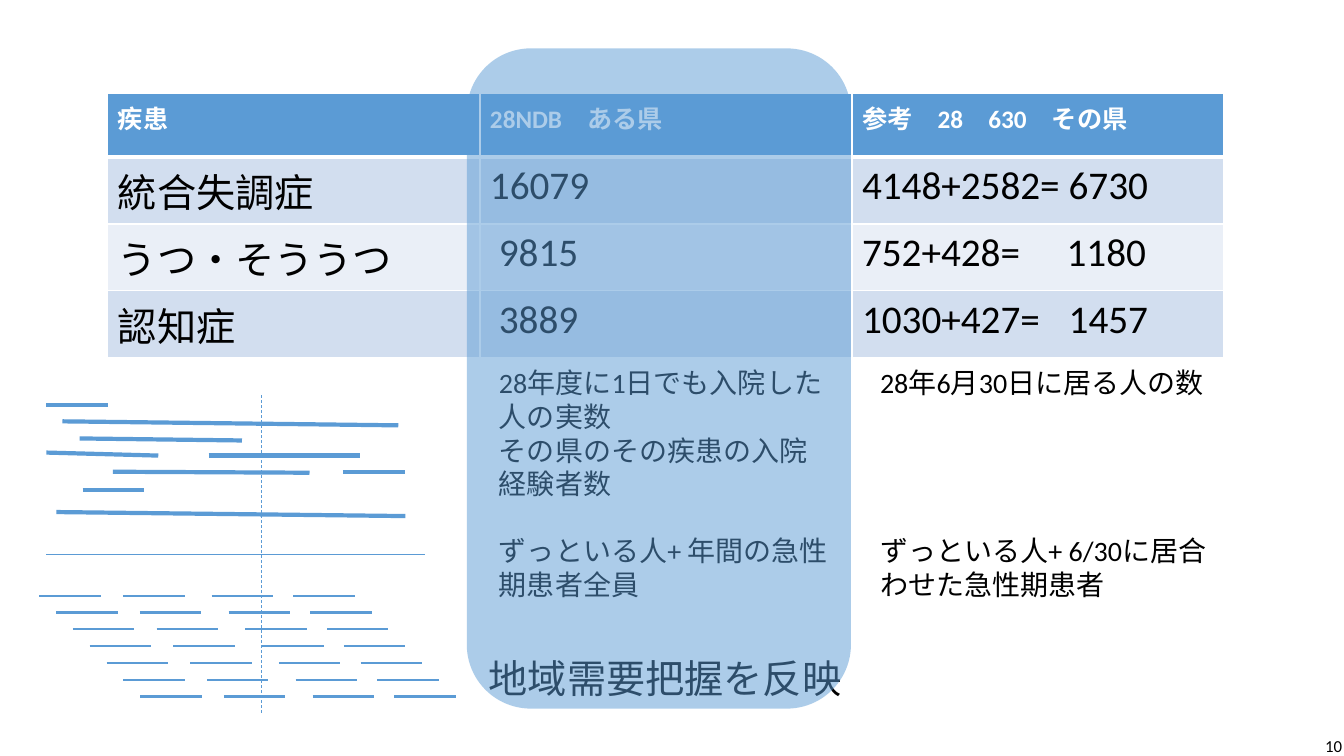
"""Build a slide comparing yearly inpatient counts with a one-day census."""
from dataclasses import dataclass

from lxml.etree import SubElement
from pptx import Presentation
from pptx.dml.color import RGBColor
from pptx.enum.dml import MSO_LINE
from pptx.enum.shapes import MSO_CONNECTOR, MSO_SHAPE
from pptx.enum.text import MSO_ANCHOR, MSO_AUTO_SIZE, PP_ALIGN
from pptx.oxml.ns import qn
from pptx.slide import Slide
from pptx.table import _Cell
from pptx.text.text import _Paragraph
from pptx.util import Inches, Pt

FONT = "Calibri"
BLUE, BLACK, WHITE = "5B9BD5", "000000", "FFFFFF"
BANDS = ("D2DEEF", "EAEFF7")
LINE_PITCH = 24


@dataclass(frozen=True)
class Stay:
    x1: float
    y1: float
    x2: float
    y2: float
    weight: float = 3
    dashed: bool = False


@dataclass(frozen=True)
class Paragraph:
    text: str
    lines_before: int = 0


@dataclass(frozen=True)
class Note:
    left: float
    top: float
    width: float
    height: float
    paragraphs: tuple[Paragraph, ...]
    size: float = 20


@dataclass(frozen=True)
class Row:
    height: float
    texts: tuple[str, str, str]
    tab: float = 0


ROWS = (
    Row(0.63, ("疾患", "28NDB　ある県", "参考　28　630　その県")),
    Row(0.6, ("統合失調症", "16079", "4148+2582= 6730")),
    Row(0.58, ("うつ・そううつ", " 9815", "752+428=\t1180"), 2.03),
    Row(0.63, ("認知症", " 3889", "1030+427=\t1457"), 2.05),
)

NOTES = (
    Note(4.85, 3.58, 3.51, 2.79, (
        Paragraph("28年度に1日でも入院した人の実数"),
        Paragraph("その県のその疾患の入院経験者数"),
        Paragraph("ずっといる人+ 年間の急性期患者全員", 1),
    )),
    Note(8.63, 3.58, 3.51, 2.46, (
        Paragraph("28年6月30日に居る人の数"),
        Paragraph("ずっといる人+ 6/30に居合わせた急性期患者", 4),
    )),
    Note(4.75, 6.44, 3.75, 0.98, (Paragraph("地域需要把握を反映"),), 28),
)

LONG_STAYS = (
    Stay(0.46, 4.02, 1.07, 4.02),
    Stay(0.62, 4.18, 3.95, 4.22),
    Stay(0.79, 4.35, 2.4, 4.37),
    Stay(0.46, 4.49, 1.57, 4.52),
    Stay(1.12, 4.68, 3.07, 4.69),
    Stay(3.4, 4.68, 4.02, 4.68),
    Stay(2.07, 4.52, 3.57, 4.52),
    Stay(0.82, 4.86, 1.43, 4.86),
    Stay(0.56, 5.08, 4.02, 5.12),
)
DIVIDER = Stay(0.46, 5.5, 4.22, 5.5, 0.5)
CENSUS_DAY = Stay(2.59, 3.92, 2.59, 7.07, 0.5, True)
ACUTE_STARTS = (0.39, 1.22, 2.1, 2.91)
ACUTE_ROWS, ACUTE_TOP, ACUTE_LENGTH, ACUTE_STEP = 7, 5.91, 0.61, 1 / 6


def color(value: str) -> RGBColor:
    return RGBColor.from_string(value)


def add_text(paragraph: _Paragraph, text: str, size: float,
             ink: str = BLACK, bold: bool = False) -> None:
    run = paragraph.add_run()
    run.text = text
    run.font.name = FONT
    run.font.size = Pt(size)
    run.font.bold = bold
    run.font.color.rgb = color(ink)


def add_borders(cell: _Cell, top: float, bottom: float) -> None:
    properties = cell._tc.get_or_add_tcPr()
    for side, weight in (("L", 1), ("R", 1), ("T", top), ("B", bottom)):
        border = SubElement(properties, qn(f"a:ln{side}"), w=str(Pt(weight)))
        SubElement(SubElement(border, qn("a:solidFill")), qn("a:srgbClr"), val=WHITE)


def add_tab_stop(paragraph: _Paragraph, position: float) -> None:
    stops = SubElement(paragraph._p.get_or_add_pPr(), qn("a:tabLst"))
    SubElement(stops, qn("a:tab"), pos=str(Inches(position)), algn="l")


def add_counts(slide: Slide) -> None:
    table = slide.shapes.add_table(
        len(ROWS), 3, Inches(1.07), Inches(0.93), Inches(11.07), Inches(2.43)).table
    for column in table.columns:
        column.width = Inches(3.69)
    for index, row in enumerate(ROWS):
        table.rows[index].height = Inches(row.height)
        header = index == 0
        for position, text in enumerate(row.texts):
            cell = table.cell(index, position)
            add_borders(cell, 3 if index == 1 else 1, 3 if header else 1)
            cell.fill.solid()
            cell.fill.fore_color.rgb = color(BLUE if header else BANDS[(index - 1) % 2])
            paragraph = cell.text_frame.paragraphs[0]
            if "\t" in text:
                add_tab_stop(paragraph, row.tab)
            add_text(paragraph, text, 18 if header else 28,
                     WHITE if header else BLACK, header)


def add_note(slide: Slide, note: Note) -> None:
    frame = slide.shapes.add_textbox(
        Inches(note.left), Inches(note.top), Inches(note.width), Inches(note.height)).text_frame
    frame.word_wrap = True
    frame.auto_size = MSO_AUTO_SIZE.SHAPE_TO_FIT_TEXT
    for index, content in enumerate(note.paragraphs):
        paragraph = frame.add_paragraph() if index else frame.paragraphs[0]
        if content.lines_before:
            paragraph.space_before = Pt(content.lines_before * LINE_PITCH)
        add_text(paragraph, content.text, note.size)


def add_stay(slide: Slide, stay: Stay) -> None:
    connector = slide.shapes.add_connector(
        MSO_CONNECTOR.STRAIGHT, Inches(stay.x1), Inches(stay.y1),
        Inches(stay.x2), Inches(stay.y2))
    connector.line.color.rgb = color(BLUE)
    connector.line.width = Pt(stay.weight)
    if stay.dashed:
        connector.line.dash_style = MSO_LINE.DASH
    SubElement(connector._element.spPr, qn("a:effectLst"))


def add_highlight(slide: Slide) -> None:
    highlight = slide.shapes.add_shape(
        MSO_SHAPE.ROUNDED_RECTANGLE, Inches(4.63), Inches(0.48), Inches(3.81), Inches(6.55))
    highlight.shadow.inherit = False
    highlight.line.fill.background()
    highlight.fill.solid()
    highlight.fill.fore_color.rgb = color(BLUE)
    tint = highlight._element.spPr.find(qn("a:solidFill")).find(qn("a:srgbClr"))
    SubElement(tint, qn("a:alpha"), val="50000")


def add_slide_number(slide: Slide) -> None:
    frame = slide.shapes.add_textbox(
        Inches(10.41), Inches(7.2), Inches(3), Inches(0.4)).text_frame
    frame.word_wrap = True
    frame.vertical_anchor = MSO_ANCHOR.MIDDLE
    frame.paragraphs[0].alignment = PP_ALIGN.RIGHT
    add_text(frame.paragraphs[0], "10", 12)


def main() -> None:
    presentation = Presentation()
    presentation.slide_width = Inches(13.33)
    presentation.slide_height = Inches(7.5)
    slide = presentation.slides.add_slide(presentation.slide_layouts[6])
    add_counts(slide)
    for note in NOTES:
        add_note(slide, note)
    for stay in (DIVIDER, *LONG_STAYS, CENSUS_DAY):
        add_stay(slide, stay)
    for start in ACUTE_STARTS:
        for row in range(ACUTE_ROWS):
            x, y = start + row * ACUTE_STEP, ACUTE_TOP + row * ACUTE_STEP
            add_stay(slide, Stay(x, y, x + ACUTE_LENGTH, y, 1.5))
    add_highlight(slide)
    add_slide_number(slide)
    presentation.save("out.pptx")


if __name__ == "__main__":
    main()
